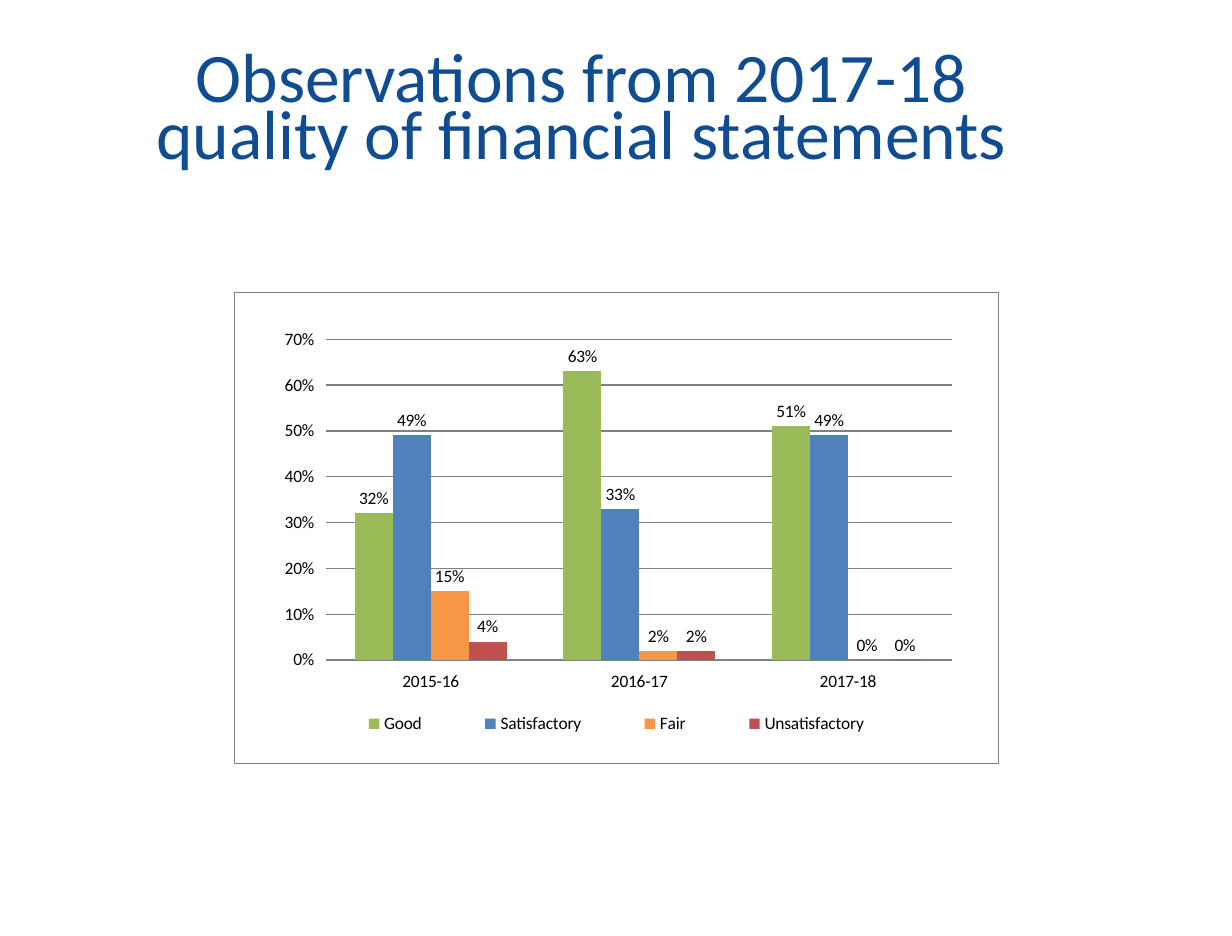
"""Build a slide charting the quality of financial statements over three years."""
from pptx import Presentation
from pptx.chart.data import CategoryChartData
from pptx.dml.color import RGBColor
from pptx.enum.chart import XL_CHART_TYPE, XL_LABEL_POSITION, XL_LEGEND_POSITION, XL_TICK_MARK
from pptx.enum.text import MSO_ANCHOR, PP_ALIGN
from pptx.oxml import parse_xml
from pptx.oxml.ns import nsdecls, qn
from pptx.util import Inches, Pt

CLUSTERED = XL_CHART_TYPE.COLUMN_CLUSTERED
OUTSIDE_END = XL_LABEL_POSITION.OUTSIDE_END
BOTTOM = XL_LEGEND_POSITION.BOTTOM
TICK_OUT = XL_TICK_MARK.OUTSIDE
TOP = MSO_ANCHOR.TOP
CENTER = PP_ALIGN.CENTER

CM_PER_INCH = 2.54
FONT = "Calibri"
COLORS = {
    "title": "0F4C92",
    "text": "000000",
    "grid": "808080",
    "Good": "9BBB59",
    "Satisfactory": "4F81BD",
    "Fair": "F79646",
    "Unsatisfactory": "C0504D",
}
YEARS = ["2015-16", "2016-17", "2017-18"]
RATINGS = {
    "Good": [0.32, 0.63, 0.51],
    "Satisfactory": [0.49, 0.33, 0.49],
    "Fair": [0.15, 0.02, 0],
    "Unsatisfactory": [0.04, 0.02, 0],
}


def add_text(slide, text, *, left, top, width, height, size, color, line_spacing):
    box = slide.shapes.add_textbox(Inches(left), Inches(top), Inches(width), Inches(height))
    frame = box.text_frame
    frame.word_wrap = True
    frame.vertical_anchor = TOP
    paragraph = frame.paragraphs[0]
    paragraph.text = text
    paragraph.alignment = CENTER
    paragraph.line_spacing = Pt(line_spacing)
    for run in paragraph.runs:
        run.font.name = FONT
        run.font.size = Pt(size)
        run.font.color.rgb = RGBColor.from_string(COLORS[color])


def set_layout(element, index, target, left, top, width, height):
    for old_layout in element.findall(qn("c:layout")):
        element.remove(old_layout)
    element.insert(index, parse_xml(
        f'<c:layout {nsdecls("c")}><c:manualLayout>{target}'
        '<c:xMode val="edge"/><c:yMode val="edge"/>'
        f'<c:x val="{left}"/><c:y val="{top}"/><c:w val="{width}"/><c:h val="{height}"/>'
        '</c:manualLayout></c:layout>'))


presentation = Presentation()
presentation.slide_width = Inches(25 / CM_PER_INCH)
presentation.slide_height = Inches(19 / CM_PER_INCH)
slide = presentation.slides.add_slide(presentation.slide_layouts[6])

chart_data = CategoryChartData(number_format="0%")
chart_data.categories = YEARS
for rating, shares in RATINGS.items():
    chart_data.add_series(rating, shares)
chart = slide.shapes.add_chart(
    CLUSTERED, Inches(1.87), Inches(2.33), Inches(6.11), Inches(3.78), chart_data).chart
chart.has_title = False
chart.font.name = FONT
chart.font.size = Pt(10)
chart.font.color.rgb = RGBColor.from_string(COLORS["text"])

plot = chart.plots[0]
plot.gap_width = 150
plot.overlap = 0
plot.vary_by_categories = False
for series in plot.series:
    series.format.fill.solid()
    series.format.fill.fore_color.rgb = RGBColor.from_string(COLORS[series.name])
    labels = series.data_labels
    labels.show_value = True
    labels.number_format = "0%"
    labels.number_format_is_linked = False
    labels.position = OUTSIDE_END

for axis in (chart.category_axis, chart.value_axis):
    axis.major_tick_mark = TICK_OUT
    axis.format.line.fill.background()

value_axis = chart.value_axis
value_axis.minimum_scale = 0
value_axis.maximum_scale = 0.7
value_axis.major_unit = 0.1
value_axis.tick_labels.number_format = "0%"
value_axis.tick_labels.number_format_is_linked = False
value_axis.has_major_gridlines = True
grid_line = value_axis.major_gridlines.format.line
grid_line.width = Pt(0.75)
grid_line.color.rgb = RGBColor.from_string(COLORS["grid"])

chart.has_legend = True
chart.legend.position = BOTTOM
chart.legend.include_in_layout = False

chart_element = chart.element.find(qn("c:chart"))
set_layout(chart_element.find(qn("c:plotArea")), 0, '<c:layoutTarget val="inner"/>',
           0.12, 0.1, 0.82, 0.68)
set_layout(chart_element.find(qn("c:legend")), 1, "", 0.1, 0.88, 0.8, 0.07)
chart_element.addnext(parse_xml(
    f'<c:spPr {nsdecls("c", "a")}><a:noFill/><a:ln w="{Pt(0.75)}"><a:solidFill>'
    f'<a:srgbClr val="{COLORS["grid"]}"/></a:solidFill></a:ln></c:spPr>'))

add_text(slide, "Observations from 2017-18\vquality of financial statements",
         left=0.67, top=0.42, width=7.95, height=1.7,
         size=40, color="title", line_spacing=33.1)

presentation.save("out.pptx")
